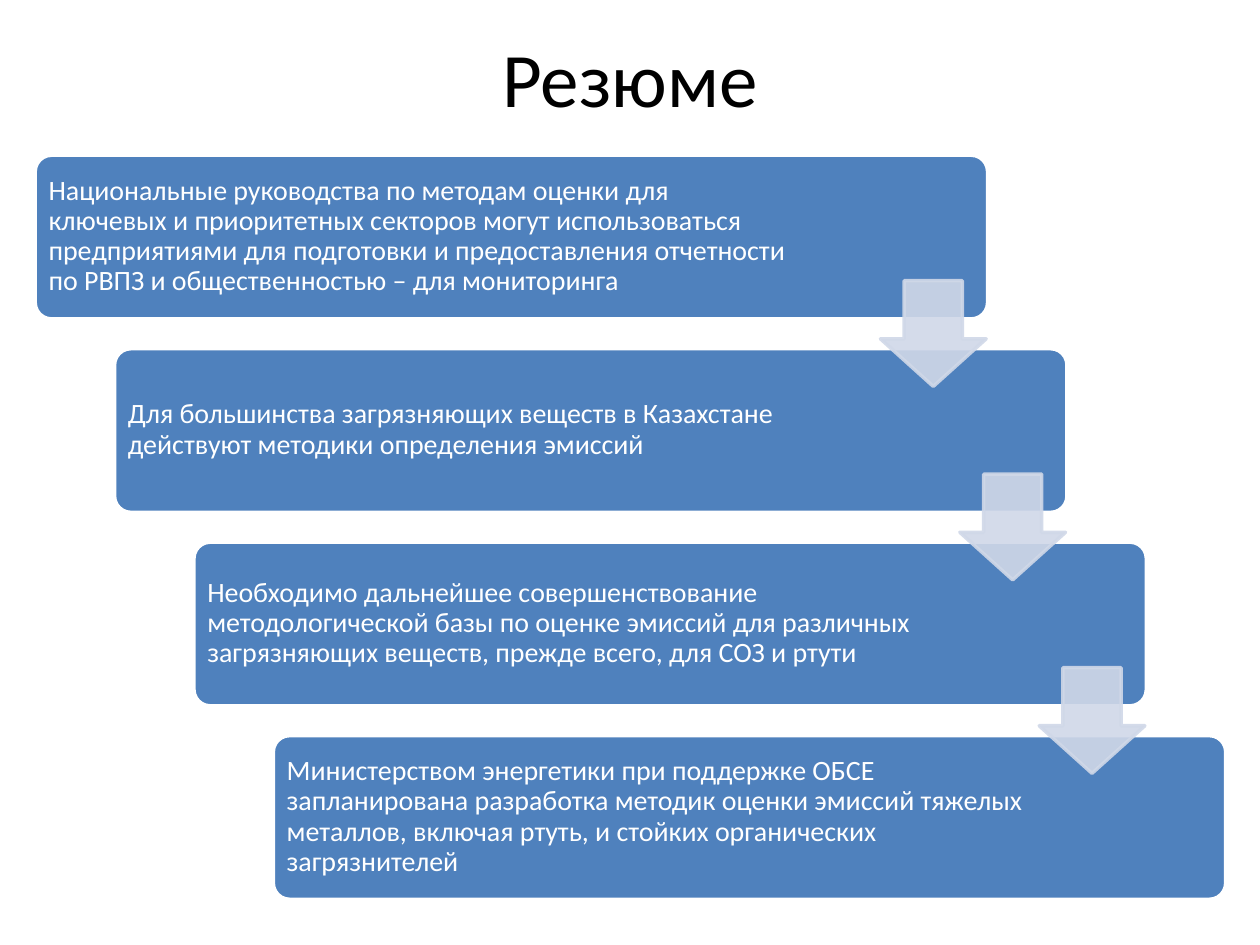
from lxml.etree import SubElement
from pptx import Presentation
from pptx.dml.color import RGBColor
from pptx.enum.shapes import MSO_SHAPE
from pptx.enum.text import MSO_ANCHOR, PP_ALIGN
from pptx.oxml.ns import qn
from pptx.util import Cm, Pt

TITLE = "Резюме"
STEPS = [
    "Национальные руководства по методам оценки для ключевых и приоритетных "
    "секторов могут использоваться предприятиями для подготовки и "
    "предоставления отчетности по РВПЗ и общественностью – для мониторинга",
    "Для большинства загрязняющих веществ в Казахстане действуют методики "
    "определения эмиссий",
    "Необходимо дальнейшее совершенствование методологической базы по оценке "
    "эмиссий для различных загрязняющих веществ, прежде всего, для СОЗ и ртути",
    "Министерством энергетики при поддержке ОБСЕ запланирована разработка "
    "методик оценки эмиссий тяжелых металлов, включая ртуть, и стойких "
    "органических загрязнителей",
]

THEME = {
    "font": "Calibri", "title": Pt(44), "body": Pt(16), "edge": Pt(2),
    "black": RGBColor(0x00, 0x00, 0x00), "white": RGBColor(0xFF, 0xFF, 0xFF),
    "blue": RGBColor(0x4F, 0x81, 0xBD), "pale": RGBColor(0xD0, 0xD8, 0xE8),
}

# Lengths in cm; each step moves right and down by the same amount
LEFT, TOP = 0.71, 3.13
SHIFT, DROP = 1.6, 3.9
CARD = (19.2, 3.3)
PAD, TEXT = 0.09, (15.32, 3.1)
ARROW, ARROW_AT = (2.13, 2.13), (17.04, 2.53)
INSET = Cm(0.18)


def apply(item, values):
    for name, value in values.items():
        setattr(item, name, value)


def write(frame, text, size, color, para):
    """Fill a text frame with one formatted paragraph."""
    apply(frame, {"word_wrap": True, "vertical_anchor": MSO_ANCHOR.MIDDLE})
    line = frame.paragraphs[0]
    apply(line, para)
    run = line.add_run()
    run.text = text
    apply(run.font, {"name": THEME["font"], "size": THEME[size]})
    run.font.color.rgb = THEME[color]


def draw(slide, kind, spot, size, adjust, fill, edge):
    shape = slide.shapes.add_shape(kind, *map(Cm, spot + size))
    shape.shadow.inherit = False
    for i, value in enumerate(adjust):
        shape.adjustments[i] = value
    shape.fill.solid()
    shape.fill.fore_color.rgb = THEME[fill]
    shape.line.color.rgb = THEME[edge]
    shape.line.width = THEME["edge"]
    return shape


def fade(shape, percent):
    """Set the opacity of fill and line."""
    for color in shape._element.spPr.iter(qn("a:srgbClr")):
        SubElement(color, qn("a:alpha"), val=str(percent * 1000))


def main():
    deck = Presentation()
    apply(deck, {"slide_width": Cm(25.4), "slide_height": Cm(19.05)})
    slide = deck.slides.add_slide(deck.slide_layouts[5])
    head = slide.shapes.title
    apply(head, {"left": Cm(1.27), "top": Cm(0.13),
                 "width": Cm(22.86), "height": Cm(2.82)})
    write(head.text_frame, TITLE, "title", "black",
          {"alignment": PP_ALIGN.CENTER})

    spots = [(LEFT + i * SHIFT, TOP + i * DROP) for i in range(len(STEPS))]
    for (x, y), text in zip(spots, STEPS):
        draw(slide, MSO_SHAPE.ROUNDED_RECTANGLE, (x, y), CARD, [0.1],
             "blue", "white")
        box = slide.shapes.add_textbox(*map(Cm, (x + PAD, y + PAD) + TEXT))
        sides = ("left", "top", "right", "bottom")
        apply(box.text_frame, {f"margin_{side}": INSET for side in sides})
        write(box.text_frame, text, "body", "white",
              {"alignment": PP_ALIGN.LEFT, "line_spacing": 0.9})

    for x, y in spots[:-1]:
        spot = (x + ARROW_AT[0], y + ARROW_AT[1])
        arrow = draw(slide, MSO_SHAPE.DOWN_ARROW, spot, ARROW, [0.55, 0.45],
                     "pale", "pale")
        fade(arrow, 90)

    deck.save("out.pptx")


if __name__ == "__main__":
    main()
